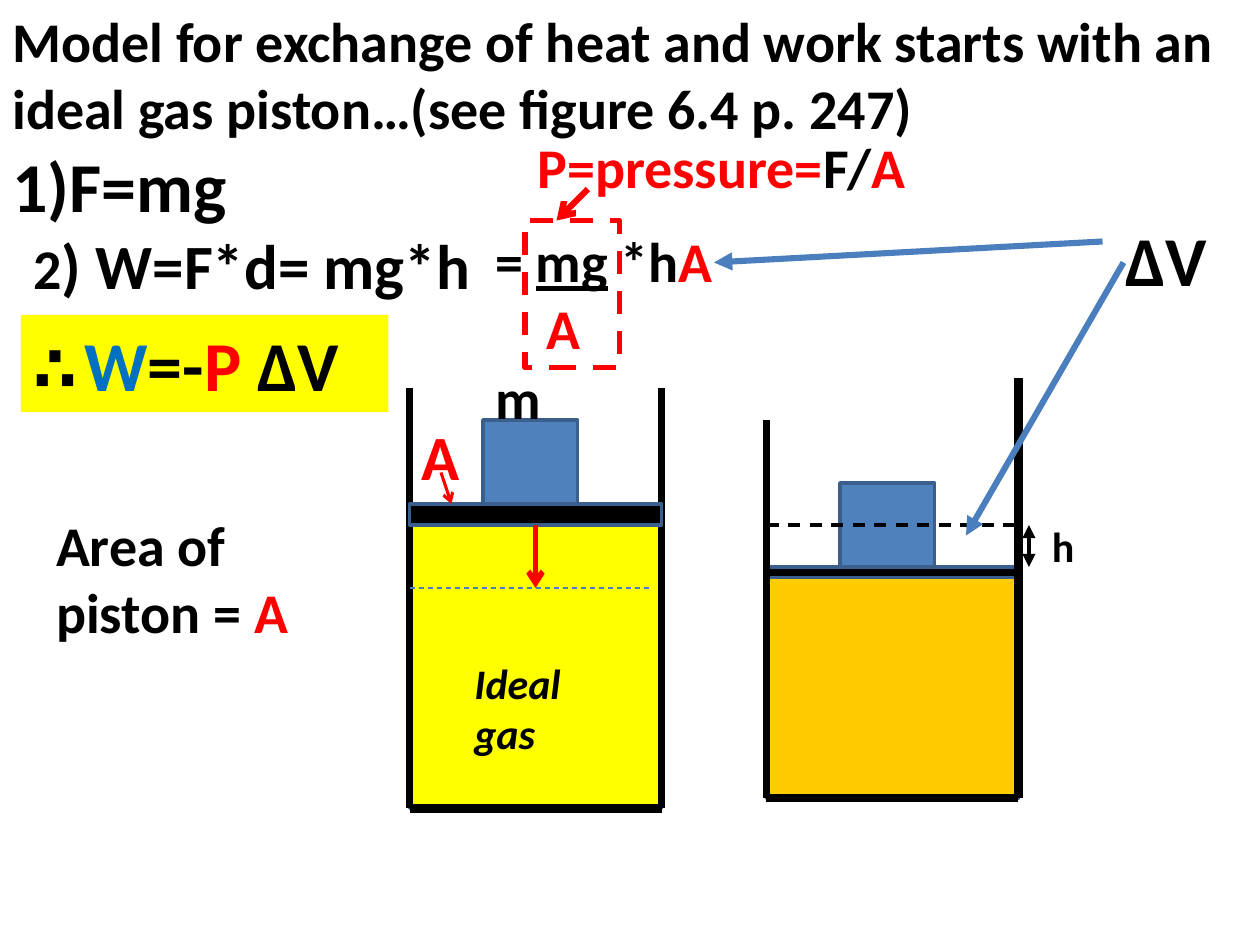
from pptx import Presentation
from pptx.dml.color import RGBColor
from pptx.enum.dml import MSO_LINE
from pptx.enum.shapes import MSO_CONNECTOR, MSO_SHAPE
from pptx.enum.text import MSO_ANCHOR
from pptx.oxml.ns import qn
from pptx.util import Pt
from lxml.etree import SubElement

BLACK = RGBColor(0x00, 0x00, 0x00)
RED = RGBColor(0xFF, 0x00, 0x00)
YELLOW = RGBColor(0xFF, 0xFF, 0x00)
ORANGE = RGBColor(0xFF, 0xCC, 0x00)
BLUE = RGBColor(0x4F, 0x81, 0xBD)
EDGE = RGBColor(0x3A, 0x5F, 0x8C)
ARROW = RGBColor(0x4B, 0x7E, 0xBC)
SKY = RGBColor(0x00, 0x70, 0xC0)

prs = Presentation()
prs.slide_width, prs.slide_height = Pt(720), Pt(540)
s = prs.slides.add_slide(prs.slide_layouts[6])


def add_rect(x, y, w, h, fill, edge=EDGE, width=2):
    sp = s.shapes.add_shape(MSO_SHAPE.RECTANGLE, Pt(x), Pt(y), Pt(w), Pt(h))
    sp.shadow.inherit = False
    if fill is None:
        sp.fill.background()
    else:
        sp.fill.solid()
        sp.fill.fore_color.rgb = fill
    sp.line.color.rgb = edge
    sp.line.width = Pt(width)
    return sp


def add_line(x1, y1, x2, y2, color, width, dash=False, head=None, tail=None):
    c = s.shapes.add_connector(MSO_CONNECTOR.STRAIGHT, Pt(x1), Pt(y1), Pt(x2), Pt(y2))
    c.line.color.rgb = color
    c.line.width = Pt(width)
    if dash:
        c.line.dash_style = MSO_LINE.DASH
    ln = c.line._get_or_add_ln()
    for tag, kind in (("a:headEnd", head), ("a:tailEnd", tail)):
        if kind:
            SubElement(ln, qn(tag)).set("type", kind)
    SubElement(c._element.spPr, qn("a:effectLst"))
    return c


add_rect(234, 300, 144, 162, YELLOW)
add_line(234, 462, 234, 222, BLACK, 4.25)
add_line(234, 462, 378, 462, BLACK, 5)
add_line(378, 462, 378, 222, BLACK, 4.25)
piston = add_rect(234, 288, 144, 12, BLACK)
add_rect(276, 240, 54, 48, BLUE)
push = add_line(306, 300, 306, 336, RED, 3, tail="arrow")
push.begin_connect(piston, 2)
add_line(234, 336, 372, 336, ARROW, 0.75, dash=True)

add_rect(438, 324, 144, 12, BLACK)
add_rect(480, 276, 54, 48, BLUE)
add_rect(438, 330, 144, 126, ORANGE)
add_line(582, 456, 582, 216, BLACK, 5.5)
add_line(438, 456, 438, 240, BLACK, 4.25)
add_line(438, 456, 582, 456, BLACK, 5)
add_line(438, 300, 582, 300, BLACK, 1.75, dash=True)
add_line(588, 300, 588, 324, BLACK, 2.5, head="triangle", tail="triangle")

add_line(408, 150, 630, 138, ARROW, 3.5, head="triangle")
add_line(552, 306, 642, 150, ARROW, 3.5, head="triangle")
add_line(336, 108, 318, 126, RED, 3.5, tail="arrow")
add_line(252, 270, 258, 288, RED, 1.75, tail="arrow")
fraction = add_rect(300, 126, 54, 84, None, RED, 3.25)
fraction.line.dash_style = MSO_LINE.DASH

texts = [
    (0, 0, 708, 85, [[("Model for exchange of heat and work starts with an ideal gas piston…(see figure 6.4 p. 247)", 32, BLACK)]]),
    (264, 372, 78, 65.5, [[("Ideal gas", 24, BLACK, "i")]]),
    (276, 204, 48, 46, [[("m", 32, BLACK)]]),
    (25, 288, 191, 85, [[("Area of piston = ", 32, BLACK), ("A", 32, RED)]]),
    (0, 78, 192, 55.5, [[("1)F=mg", 40, BLACK)]]),
    (12, 126, 306, 51, [[("2", 32, BLACK), (") W=F*d= mg*h", 36, BLACK)]]),
    (276, 126, 240, 85, [[("= ", 32, BLACK), ("mg", 32, BLACK, "u"), (" *h", 32, BLACK), ("A", 32, RED)],
                         [("A", 32, RED)]]),
    (636, 120, 84, 55.5, [[("ΔV", 40, BLACK)]]),
    (300, 72, 234, 46, [[("P=pressure=", 32, RED), ("F/", 32, BLACK), ("A", 32, RED)]]),
    (12, 180, 210, 55.5, [[("∴", 36, BLACK), (" ", 18, BLACK), ("W", 40, SKY), ("=-", 40, BLACK),
                           ("P ", 40, RED), ("ΔV", 40, BLACK)]]),
    (234, 235, 37, 51, [[("A", 36, RED)]]),
    (594, 294, 30, 36, [[("h", 24, BLACK)]]),
]
for x, y, w, h, paragraphs in texts:
    sp = s.shapes.add_textbox(Pt(x), Pt(y), Pt(w), Pt(h))
    tf = sp.text_frame
    tf.word_wrap = True
    tf.vertical_anchor = MSO_ANCHOR.TOP
    if paragraphs[0][0][0] == "∴":
        sp.fill.solid()
        sp.fill.fore_color.rgb = YELLOW
    for i, runs in enumerate(paragraphs):
        p = tf.add_paragraph() if i else tf.paragraphs[0]
        if i:
            p._p.get_or_add_pPr().set("marL", str(Pt(29)))
        for text, size, color, *style in runs:
            r = p.add_run()
            r.text = text
            r.font.name = "Calibri"
            r.font.size = Pt(size)
            r.font.bold = text != " "
            r.font.italic = "i" in style
            r.font.underline = "u" in style
            r.font.color.rgb = color

prs.save("out.pptx")
